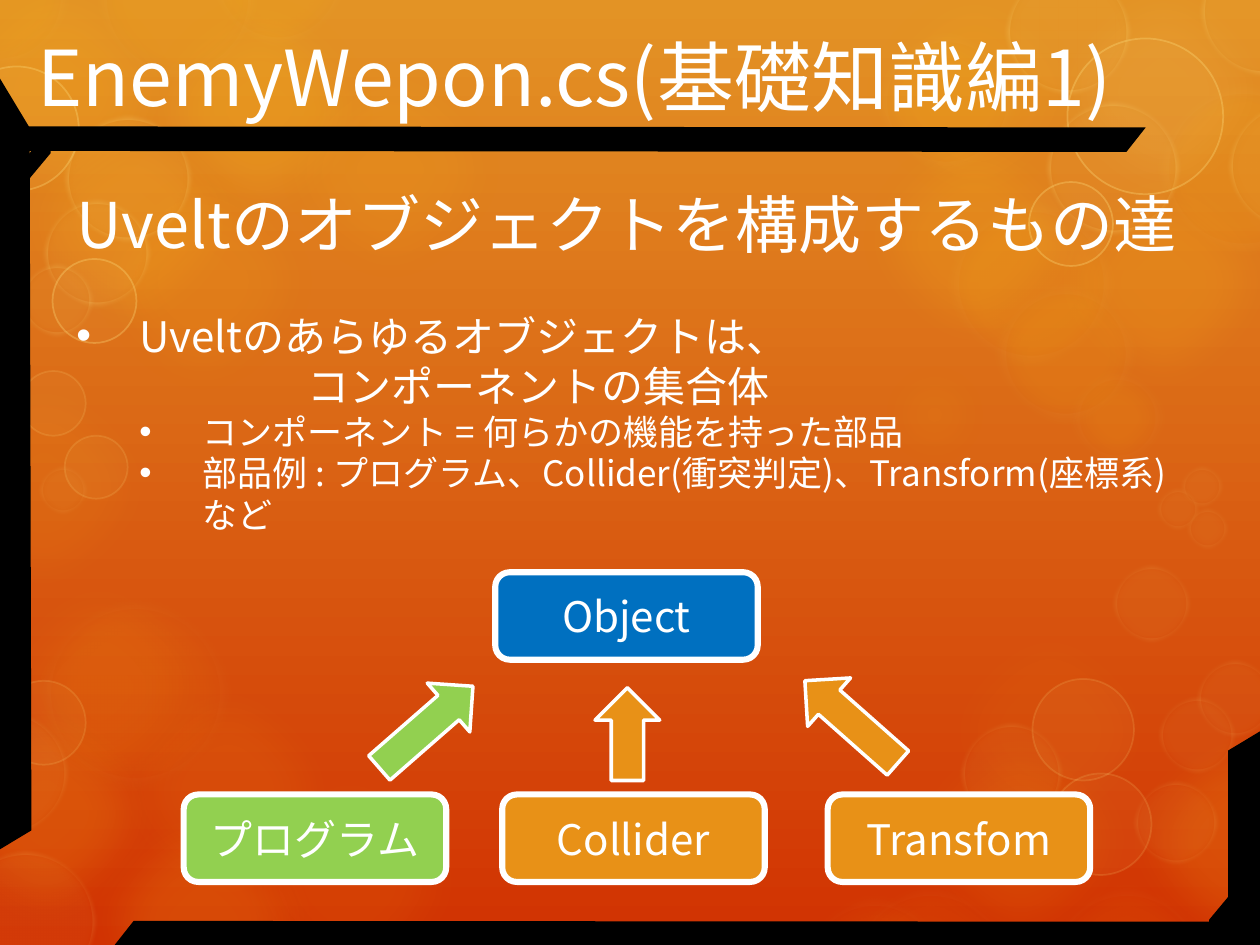
from dataclasses import dataclass

from lxml.etree import SubElement
from pptx import Presentation
from pptx.dml.color import RGBColor
from pptx.enum.shapes import MSO_SHAPE
from pptx.enum.text import MSO_ANCHOR, MSO_AUTO_SIZE, PP_ALIGN
from pptx.oxml.ns import qn
from pptx.util import Pt


@dataclass(frozen=True)
class Theme:
    font: str = "Noto Sans CJK JP"
    text: str = "FFFFFF"
    frame: str = "000000"
    bg_top: str = "E39325"
    bg_bottom: str = "D13202"
    amber: str = "FDC61B"
    pale: str = "FFE281"
    halo: str = "FEEBAE"
    blue: str = "0070C0"
    orange: str = "E89117"
    green: str = "92D050"
    title: int = 44
    heading: int = 36
    body: int = 24
    detail: int = 20
    leading: float = 1.19


T = Theme()

# Circle style: fill, fill %, line, line width, line %, soft edge; then (left, top, size)
BOKEH = [
    ((T.amber, 8, None, 0, 0, 24),
     [(-18, 318, 150), (55, 377, 150), (125, 429, 150), (-50, 203, 150)]),
    ((T.amber, 10, None, 0, 0, 24),
     [(41, 86, 150), (148, 22, 150), (482, -21, 150), (508, 405, 150), (486, 189, 96)]),
    ((T.amber, 15, None, 0, 0, 24),
     [(41, 451, 150), (-40, -23, 150), (0, 52, 150), (590, 86, 150),
      (634, 405, 150), (-49, 390, 150), (482, 62, 150)]),
    ((T.amber, 20, None, 0, 0, 24), [(73, -13, 150)]),
    ((T.amber, 5, None, 0, 0, 24), [(525, 343, 150)]),
    ((T.pale, 10, None, 0, 0, 24), [(590, -23, 150)]),
    ((T.amber, 10, T.halo, 14, 6, 12),
     [(661, 47, 99), (500, 17, 82), (541, 114, 96), (568, 161, 82), (610, 210, 57),
      (54, -47, 94), (118, -54, 82), (-41, -42, 82)]),
    ((T.amber, 6, T.halo, 14, 4, 12),
     [(22, 341, 110), (455, 511, 90), (482, 505, 99), (596, 505, 96)]),
    ((T.pale, 5, T.pale, 5, 15, 4),
     [(-26, 486, 81), (-32, 406, 71), (549, 413, 58), (648, 446, 48), (636, 323, 44),
      (662, 398, 44), (684, 377, 44), (675, 266, 24), (661, 279, 24), (678, 290, 24),
      (22, 266, 28)]),
    ((T.pale, 5, T.pale, 5, 30, 4),
     [(37, 66, 72), (25, 114, 61), (12, 151, 41), (575, -17, 71), (686, -29, 72),
      (702, 59, 72), (598, 58, 76)]),
    ((T.pale, 5, T.pale, 1, 15, 0),
     [(1, 389, 48), (600, 442, 58), (590, 388, 58), (12, 212, 37), (37, 249, 36)]),
    ((T.pale, 5, T.pale, 1, 30, 0),
     [(-26, 38, 71), (30, 148, 48), (610, 22, 89), (588, 104, 48)]),
]

# Stripe: left, top, width, height, rotation, inner edge; relative to a corner
TOP_LEFT = [(42, -140, 539, 425, 218.3, .958), (-115, 74, 228, 380, 148.9, .906),
            (-1, 73, 30, 36, 180, .599)]
BOTTOM_RIGHT = [(-581, -212, 539, 425, 38.3, .958), (-38, -112, 79, 131, 328.9, .709),
                (-29, -36, 30, 36, 0, .599)]

# Paragraph: text, size, level, margin, bullet, space after
BODY = [
    ("Uveltのオブジェクトを構成するもの達", T.heading, 0, 0, False, 28),
    ("Uveltのあらゆるオブジェクトは、", T.body, 0, 36, True, 0),
    ("コンポーネントの集合体", T.body, 0, 132, False, 0),
    ("コンポーネント = 何らかの機能を持った部品", T.detail, 1, 72, True, 0),
    ("部品例 : プログラム、Collider(衝突判定)、Transform(座標系)など",
     T.detail, 1, 72, True, 0),
]

# Node: text, fill, left, top; arrow: fill, left, top, width, height, rotation
NODES = [("Object", T.blue, 178, 0), ("Collider", T.orange, 182, 127),
         ("Transfom", T.orange, 368, 127), ("プログラム", T.green, 0, 127)]
ARROWS = [(T.green, 120, 53, 37, 71, 228.9), (T.orange, 235, 66, 37, 53, 180),
          (T.orange, 363, 50, 37, 71, 131.5)]


def rgb(value):
    return RGBColor.from_string(value)


def place(sp, left, top, width, height):
    for name, value in dict(left=left, top=top, width=width, height=height).items():
        setattr(sp, name, Pt(value))


def add_shape(shapes, kind, box, fill, line=None, weight=0):
    sp = shapes.add_shape(kind, *map(Pt, box))
    sp.shadow.inherit = False
    sp.fill.solid()
    sp.fill.fore_color.rgb = rgb(fill)
    if line:
        sp.line.color.rgb = rgb(line)
        sp.line.width = Pt(weight)
    else:
        sp.line.fill.background()
    return sp


def add_run(p, text, size):
    r = p.add_run()
    r.text = text
    for name, value in dict(name=T.font, size=Pt(size)).items():
        setattr(r.font, name, value)
    r.font.color.rgb = rgb(T.text)
    SubElement(r._r.get_or_add_rPr(), qn("a:ea"), typeface=T.font)


def set_frame(tf, anchor):
    settings = dict(word_wrap=True, auto_size=MSO_AUTO_SIZE.NONE, vertical_anchor=anchor)
    for name, value in settings.items():
        setattr(tf, name, value)


def set_paragraph(p, size, after=0, align=PP_ALIGN.LEFT):
    settings = dict(alignment=align, line_spacing=Pt(round(size * T.leading, 1)),
                    space_before=Pt(0), space_after=Pt(after))
    for name, value in settings.items():
        setattr(p, name, value)


def bring_forward(sp):
    sp.element.getparent().append(sp.element)


def add_background(s):
    fill = s.background.fill
    fill.gradient()
    fill.gradient_angle = 270
    for stop, color in zip(fill.gradient_stops, (T.bg_top, T.bg_bottom)):
        stop.color.rgb = rgb(color)


def add_bokeh(s):
    for (fill, fill_pct, line, weight, line_pct, soft), circles in BOKEH:
        for left, top, size in circles:
            sp = add_shape(s.shapes, MSO_SHAPE.OVAL, (left, top, size, size),
                           fill, line, weight)
            spPr = sp.element.spPr
            for color, pct in zip(spPr.iter(qn("a:srgbClr")), (fill_pct, line_pct)):
                SubElement(color, qn("a:alpha"), val=str(pct * 1000))
            if soft:
                SubElement(spPr.find(qn("a:effectLst")), qn("a:softEdge"),
                           rad=str(Pt(soft)))


def add_corner(s, x, y, stripes):
    group = s.shapes.add_group_shape()
    for left, top, width, height, rotation, inner in stripes:
        sp = add_shape(group.shapes, MSO_SHAPE.DIAGONAL_STRIPE,
                       (x + left, y + top, width, height), T.frame)
        sp.rotation = rotation
        sp.adjustments[0] = inner


def fill_title(s, box):
    sp = s.shapes.title
    place(sp, *box)
    bring_forward(sp)
    set_frame(sp.text_frame, MSO_ANCHOR.BOTTOM)
    p = sp.text_frame.paragraphs[0]
    set_paragraph(p, T.title)
    add_run(p, "EnemyWepon.cs(基礎知識編1)", T.title)


def fill_body(s, box):
    sp = s.placeholders[1]
    place(sp, *box)
    bring_forward(sp)
    tf = sp.text_frame
    set_frame(tf, MSO_ANCHOR.TOP)
    for i, (text, size, level, margin, bullet, after) in enumerate(BODY):
        p = tf.add_paragraph() if i else tf.paragraphs[0]
        p.level = level
        set_paragraph(p, size, after)
        pPr = p._p.get_or_add_pPr()
        pPr.set("marL", str(Pt(margin)))
        pPr.set("indent", str(Pt(-36 if bullet else 0)))
        if bullet:
            SubElement(pPr, qn("a:buChar"), char="•")
        else:
            SubElement(pPr, qn("a:buNone"))
        add_run(p, text, size)


def add_diagram(s, x, y):
    # Object and its components
    for text, fill, left, top in NODES:
        sp = add_shape(s.shapes, MSO_SHAPE.FLOWCHART_ALTERNATE_PROCESS,
                       (x + left, y + top, 150, 50), fill, T.text, 3.5)
        set_frame(sp.text_frame, MSO_ANCHOR.MIDDLE)
        p = sp.text_frame.paragraphs[0]
        p.alignment = PP_ALIGN.CENTER
        add_run(p, text, T.body)
    # Arrows from components to object
    for fill, left, top, width, height, rotation in ARROWS:
        sp = add_shape(s.shapes, MSO_SHAPE.DOWN_ARROW,
                       (x + left, y + top, width, height), fill, T.text, 2)
        sp.rotation = rotation


def main():
    prs = Presentation()
    prs.slide_width, prs.slide_height = Pt(720), Pt(540)
    s = prs.slides.add_slide(prs.slide_layouts[1])
    add_background(s)
    add_bokeh(s)
    fill_title(s, (14, 13, 706, 60))
    add_corner(s, 0, 0, TOP_LEFT)
    fill_body(s, (36.5, 103, 657, 416))
    add_corner(s, 720, 540, BOTTOM_RIGHT)
    add_diagram(s, 105, 327)
    prs.save("out.pptx")


if __name__ == "__main__":
    main()
